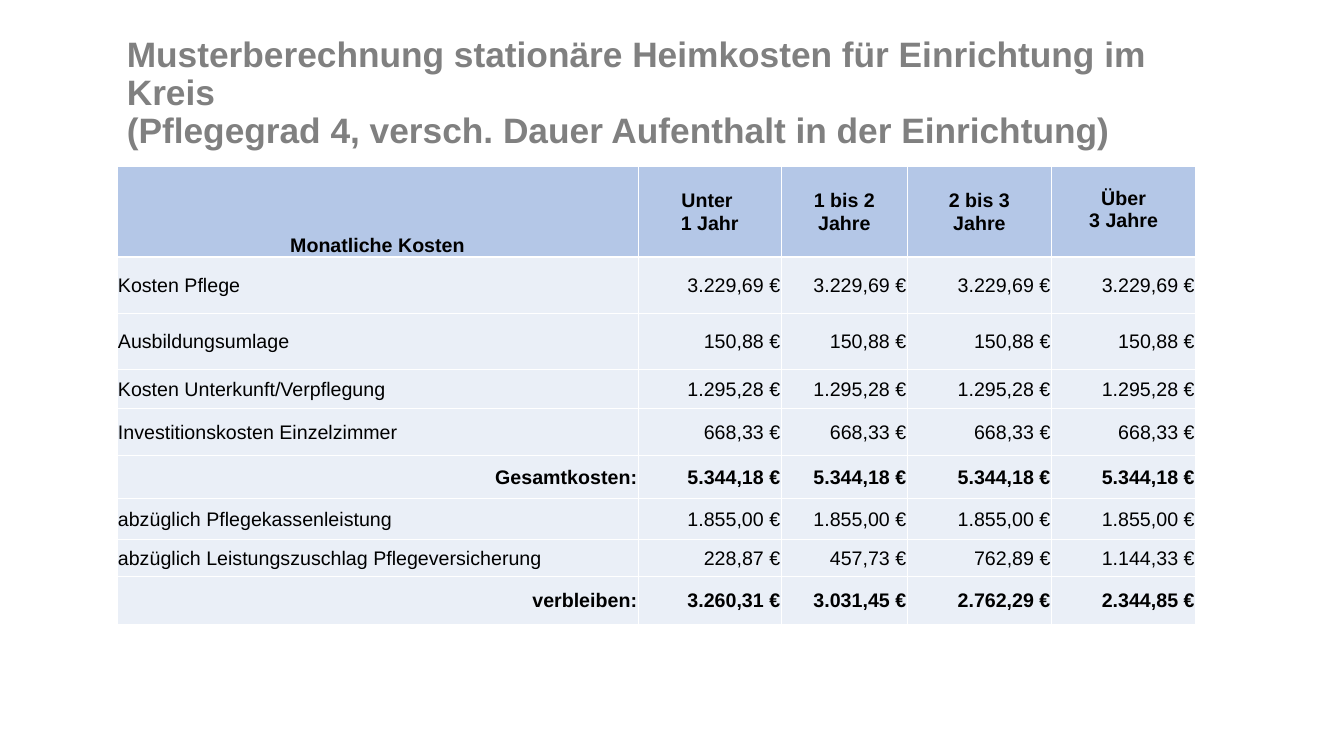
import pptx
import pptx.util
import pptx.dml.color
import pptx.enum.text
import pptx.oxml
import pptx.oxml.ns

Inches, Pt = pptx.util.Inches, pptx.util.Pt
ALIGN = pptx.enum.text.PP_ALIGN
ANCHOR = pptx.enum.text.MSO_ANCHOR

COLORS = {"title": "808080", "text": "000000", "header": "B4C7E7",
          "body": "EAEFF7", "border": "FFFFFF"}

TITLE = ("Musterberechnung stationäre Heimkosten für Einrichtung im Kreis\v"
         "(Pflegegrad 4, versch. Dauer Aufenthalt in der Einrichtung)")
HEADER = ["Monatliche Kosten", "Unter \n1 Jahr", "1 bis 2\nJahre",
          "2 bis 3\nJahre", "Über\n3 Jahre"]
COSTS = [
    ("Kosten Pflege", ["3.229,69"] * 4),
    ("Ausbildungsumlage", ["150,88"] * 4),
    ("Kosten Unterkunft/Verpflegung", ["1.295,28"] * 4),
    ("Investitionskosten Einzelzimmer", ["668,33"] * 4),
    ("Gesamtkosten:", ["5.344,18"] * 4),
    ("abzüglich Pflegekassenleistung", ["1.855,00"] * 4),
    ("abzüglich Leistungszuschlag Pflegeversicherung",
     ["228,87", "457,73", "762,89", "1.144,33"]),
    ("verbleiben:", ["3.260,31", "3.031,45", "2.762,29", "2.344,85"]),
]
COL_WIDTHS = [5.17, 1.42, 1.25, 1.43, 1.43]
ROW_HEIGHTS = [0.9, 0.56, 0.56, 0.38, 0.47, 0.43, 0.4, 0.37, 0.48]


def write(tf, text, size=14, color="text", bold=False, align=ALIGN.LEFT, spacing=None):
    """Fill a text frame; each line of text becomes a paragraph."""
    tf.text = text
    for p in tf.paragraphs:
        p.alignment = align
        p.line_spacing = spacing
        p.font.name = "Arial"
        p.font.size = Pt(size)
        p.font.bold = bold
        p.font.color.rgb = pptx.dml.color.RGBColor.from_string(COLORS[color])
        for r in p.runs:
            r.font.name = "Arial"
            r.font.size = Pt(size)
            r.font.bold = bold
            r.font.color.rgb = pptx.dml.color.RGBColor.from_string(COLORS[color])


def set_borders(cell):
    tc_pr = cell._tc.get_or_add_tcPr()
    for i, side in enumerate(("lnL", "lnR", "lnT", "lnB")):
        tc_pr.insert(i, pptx.oxml.parse_xml(
            f'<a:{side} {pptx.oxml.ns.nsdecls("a")} w="12700"><a:solidFill>'
            f'<a:srgbClr val="{COLORS["border"]}"/></a:solidFill></a:{side}>'))


def style_cell(cell, fill, anchor=ANCHOR.MIDDLE, bottom=0):
    cell.fill.solid()
    cell.fill.fore_color.rgb = pptx.dml.color.RGBColor.from_string(COLORS[fill])
    cell.vertical_anchor = anchor
    cell.margin_left = cell.margin_right = cell.margin_top = Inches(0.01)
    cell.margin_bottom = Inches(bottom)
    set_borders(cell)


def add_title(s, left, top, width, height):
    tf = s.shapes.add_textbox(Inches(left), Inches(top), Inches(width), Inches(height)).text_frame
    tf.word_wrap = True
    tf.vertical_anchor = ANCHOR.MIDDLE
    tf.margin_right = Inches(0.2)
    tf.margin_bottom = Inches(0.43)
    write(tf, TITLE, size=25.2, color="title", bold=True, spacing=0.9)


def add_cost_table(s, left, top, width, height):
    table = s.shapes.add_table(len(ROW_HEIGHTS), len(COL_WIDTHS), Inches(left), Inches(top),
                               Inches(width), Inches(height)).table
    table.first_row = table.horz_banding = False
    for column, w in zip(table.columns, COL_WIDTHS):
        column.width = Inches(w)
    for row, h in zip(table.rows, ROW_HEIGHTS):
        row.height = Inches(h)

    last = len(HEADER) - 1
    for c, text in enumerate(HEADER):
        cell = table.cell(0, c)
        write(cell.text_frame, text, bold=True, align=ALIGN.CENTER)
        style_cell(cell, "header", ANCHOR.MIDDLE if c else ANCHOR.BOTTOM,
                   bottom=0.04 if c == last else 0)

    for r, (label, amounts) in enumerate(COSTS, start=1):
        is_sum = label.endswith(":")
        for c, text in enumerate([label] + [f"{amount} €" for amount in amounts]):
            cell = table.cell(r, c)
            write(cell.text_frame, text, bold=is_sum,
                  align=ALIGN.RIGHT if c or is_sum else ALIGN.LEFT)
            style_cell(cell, "body")


def main():
    prs = pptx.Presentation()
    prs.slide_width, prs.slide_height = Inches(13.33), Inches(7.5)
    s = prs.slides.add_slide(prs.slide_layouts[6])
    add_title(s, 1.16, 0.4, 11.26, 1.45)
    add_cost_table(s, 1.16, 1.65, sum(COL_WIDTHS), sum(ROW_HEIGHTS))
    prs.save("out.pptx")


if __name__ == "__main__":
    main()
